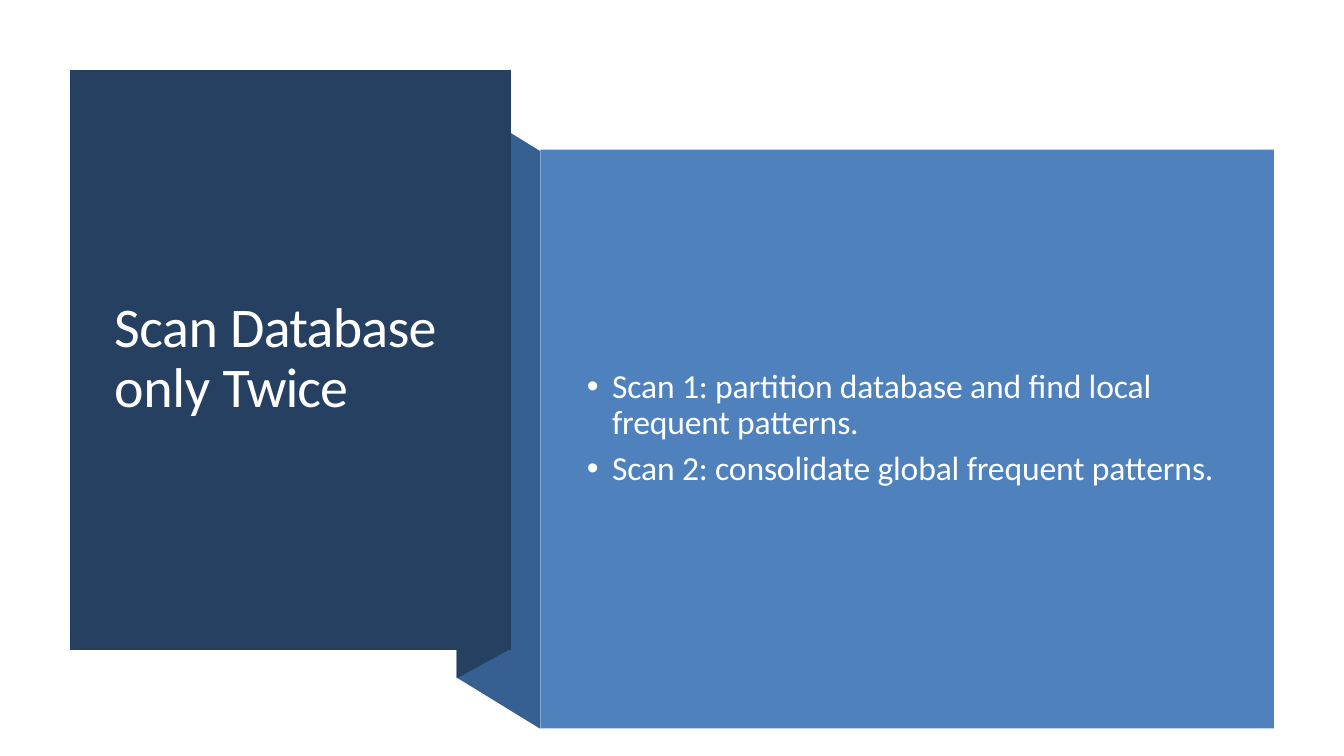
from lxml.etree import SubElement as Sub
from pptx import Presentation
from pptx.dml.color import RGBColor as RGB
from pptx.enum.shapes import MSO_SHAPE as Shape
from pptx.enum.text import MSO_ANCHOR as Anchor
from pptx.oxml.ns import qn
from pptx.util import Pt

COLORS = {"navy": "254061", "fold": "376092", "blue": "4F81BD",
          "title": "FFFFFF", "body": "FEFFFF"}

deck = Presentation()
deck.slide_width, deck.slide_height = Pt(960), Pt(540)
slide = deck.slides.add_slide(deck.slide_layouts[6])
shapes = slide.shapes


def paint(shape, color):
    shape.shadow.inherit = False
    shape.fill.solid()
    shape.fill.fore_color.rgb = RGB.from_string(COLORS[color])
    shape.line.fill.background()


def add_text(box, paras, size, color):
    """Each paragraph is (space before, runs); a run is (text, spacing)."""
    frame = shapes.add_textbox(*map(Pt, box)).text_frame
    frame.word_wrap = True
    frame.vertical_anchor = Anchor.MIDDLE
    for i, (gap, runs) in enumerate(paras):
        para = frame.paragraphs[0] if i == 0 else frame.add_paragraph()
        para.line_spacing = 0.9
        para.space_before = Pt(gap)
        for text, track in runs:
            run = para.add_run()
            run.text = text
            font = run.font
            font.name, font.size = "Calibri", Pt(size)
            font.color.rgb = RGB.from_string(COLORS[color])
            font._element.set("spc", str(track))
    return frame


# Folded ribbon, then the title panel in front of it
outlines = [
    ("fold", [(385.9, 520.6), (326.2, 484), (326.2, 71.3), (385.9, 108)]),
    ("navy", [(364.5, 463.7), (326.2, 484.6), (326.2, 70.6), (364.5, 49.7)]),
    ("navy", [(49.9, 50.2), (364.8, 50.2), (364.8, 464.2), (49.9, 464.2)]),
]
for color, points in outlines:
    start, *rest = [(Pt(x), Pt(y)) for x, y in points]
    pen = shapes.build_freeform(*start, scale=1.0)
    pen.add_line_segments(rest, close=True)
    paint(pen.convert_to_shape(), color)

# Title
words = [("Scan ", -30), ("Database ", -50), ("only ", -20), ("Twice", -70)]
head = add_text((73.5, 77, 267, 359.5), [(0, words)], 40, "title")
head.paragraphs[0]._p.get_or_add_pPr().set("marL", str(Pt(0.9)))

# Body panel
panel = shapes.add_shape(Shape.RECTANGLE, Pt(386), Pt(106.8), Pt(524), Pt(413.5))
paint(panel, "blue")

# Bulleted steps
steps = [
    (7.7, [("Scan 1: partition database and find local frequent patterns.", -10)]),
    (6.8, [("Scan 2: consolidate global frequent patterns.", -10)]),
]
body = add_text((411.2, 135.6, 468.7, 341), steps, 24, "body")
for para in body.paragraphs:
    props = para._p.get_or_add_pPr()
    props.set("marL", str(Pt(18.9)))
    props.set("indent", str(Pt(-18)))
    Sub(props, qn("a:buFont"), typeface="Arial")
    Sub(props, qn("a:buChar"), char="•")
    tabs = Sub(props, qn("a:tabLst"))
    Sub(tabs, qn("a:tab"), pos=str(Pt(18.9)), algn="l")

deck.save("out.pptx")
